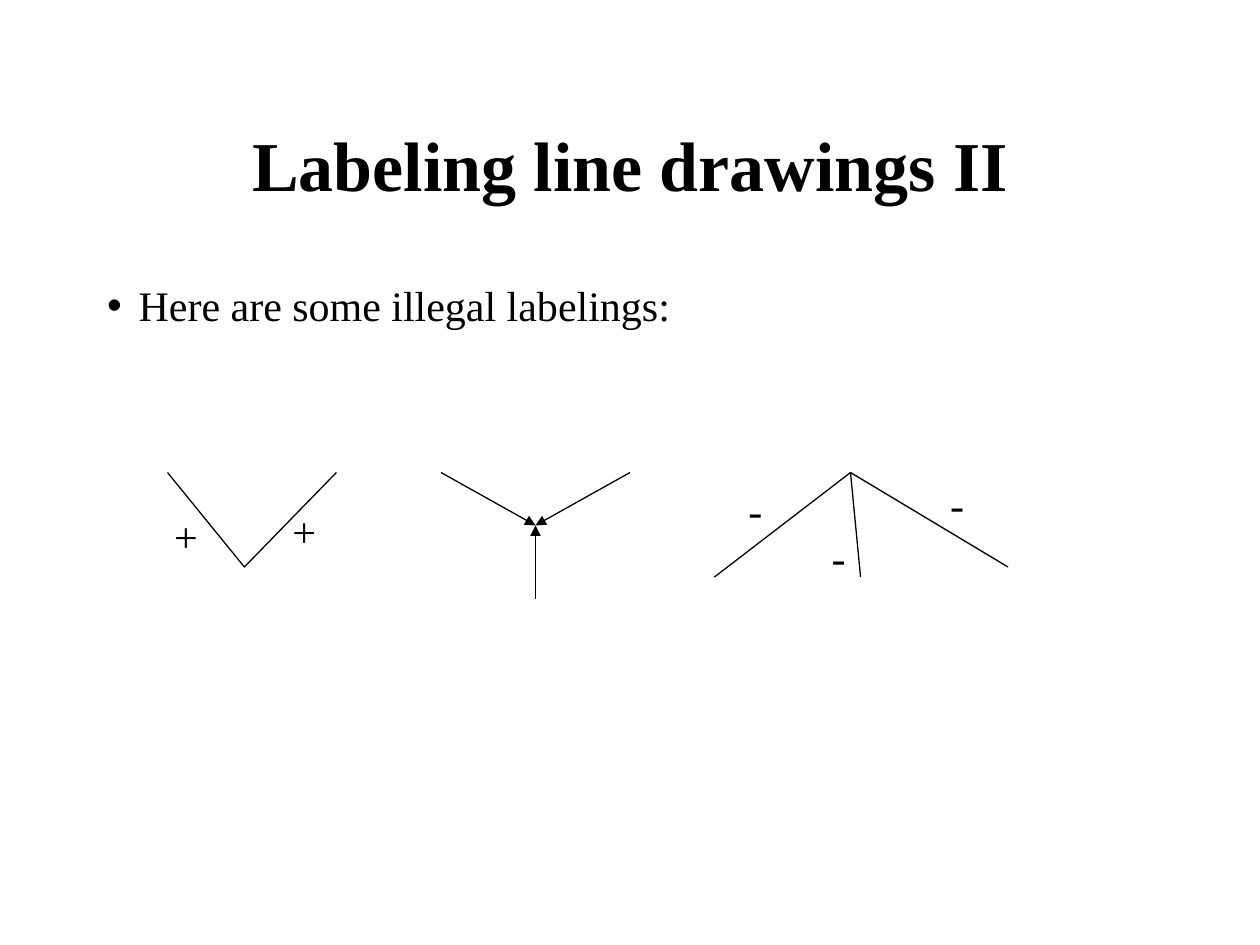
from lxml import etree
from pptx import Presentation
from pptx.dml.color import RGBColor
from pptx.enum.shapes import MSO_CONNECTOR
from pptx.enum.text import MSO_ANCHOR, MSO_AUTO_SIZE, PP_ALIGN
from pptx.oxml.ns import qn
from pptx.util import Inches, Pt

LINE = MSO_CONNECTOR.STRAIGHT
LEFT, CENTER = PP_ALIGN.LEFT, PP_ALIGN.CENTER
TOP, MIDDLE = MSO_ANCHOR.TOP, MSO_ANCHOR.MIDDLE
FIXED, GROW = MSO_AUTO_SIZE.NONE, MSO_AUTO_SIZE.SHAPE_TO_FIT_TEXT
FONT = "Times New Roman"
COLORS = {"ink": "000000", "paper": "FFFFFF"}

# Content: points and boxes in inches
TITLE = "Labeling line drawings II"
BODY = "Here are some illegal labelings:"
TITLE_BOX = (0.75, 0.67, 8.5, 1.25)
BODY_BOX = (0.75, 2.17, 8.5, 4.94)
VEE = [(1.33, 3.75), (1.94, 4.5), (2.67, 3.75)]
FORK = {"hub": (4.25, 4.17), "ends": [(3.5, 3.75), (5, 3.75), (4.25, 4.75)]}
ARROW = {"hub": (6.75, 3.75), "ends": [(5.67, 4.58), (6.83, 4.58), (8, 4.5)]}
WIDTHS = {"+": 0.39, "-": 0.31}
LABELS = [("+", 1.28, 4), ("+", 2.22, 3.96),
          ("-", 5.84, 3.8), ("-", 6.5, 4.17), ("-", 7.44, 3.75)]


def color(name):
    return RGBColor.from_string(COLORS[name])


def place(shape, box):
    shape.left, shape.top, shape.width, shape.height = map(Inches, box)


def write(shape, text, size=24, bold=False, align=CENTER, anchor=TOP,
          wrap=True, fit=FIXED):
    frame = shape.text_frame
    frame.word_wrap, frame.auto_size = wrap, fit
    frame.vertical_anchor = anchor
    para = frame.paragraphs[0]
    para.alignment = align
    run = para.add_run()
    run.text = text
    font = run.font
    font.name, font.size, font.bold = FONT, Pt(size), bold
    font.color.rgb = color("ink")
    return para


def ink(shape):
    shape.line.color.rgb = color("ink")
    shape.line.width = Pt(0.75)


def draw(start, end, tip=False):
    line = slide.shapes.add_connector(LINE, *map(Inches, start + end))
    ink(line)
    props = line._element.spPr
    if tip:
        etree.SubElement(props.find(qn("a:ln")), qn("a:tailEnd"), type="triangle")
    etree.SubElement(props, qn("a:effectLst"))


deck = Presentation()
deck.slide_width, deck.slide_height = Inches(10), Inches(7.5)
slide = deck.slides.add_slide(deck.slide_layouts[1])
slide.background.fill.solid()
slide.background.fill.fore_color.rgb = color("paper")

# Title and bullet
title, body = slide.placeholders
place(title, TITLE_BOX)
write(title, TITLE, size=40, bold=True, anchor=MIDDLE)
place(body, BODY_BOX)
props = write(body, BODY, align=LEFT)._p.get_or_add_pPr()
props.set("marL", str(Inches(0.25)))
props.set("indent", str(-Inches(0.25)))
etree.SubElement(props, qn("a:buChar"), char="•")

# Vee junction
start, *rest = [(Inches(x), Inches(y)) for x, y in VEE]
pen = slide.shapes.build_freeform(*start)
pen.add_line_segments(rest, close=False)
vee = pen.convert_to_shape()
vee.shadow.inherit = False
vee.fill.background()
ink(vee)

# Fork junction points inward, arrow junction fans outward
for end in FORK["ends"]:
    draw(end, FORK["hub"], tip=True)
for end in ARROW["ends"]:
    draw(ARROW["hub"], end)

# Edge labels
for sign, left, top in LABELS:
    box = slide.shapes.add_textbox(*map(Inches, (left, top, WIDTHS[sign], 0.5)))
    write(box, sign, wrap=False, fit=GROW)

deck.save("out.pptx")
